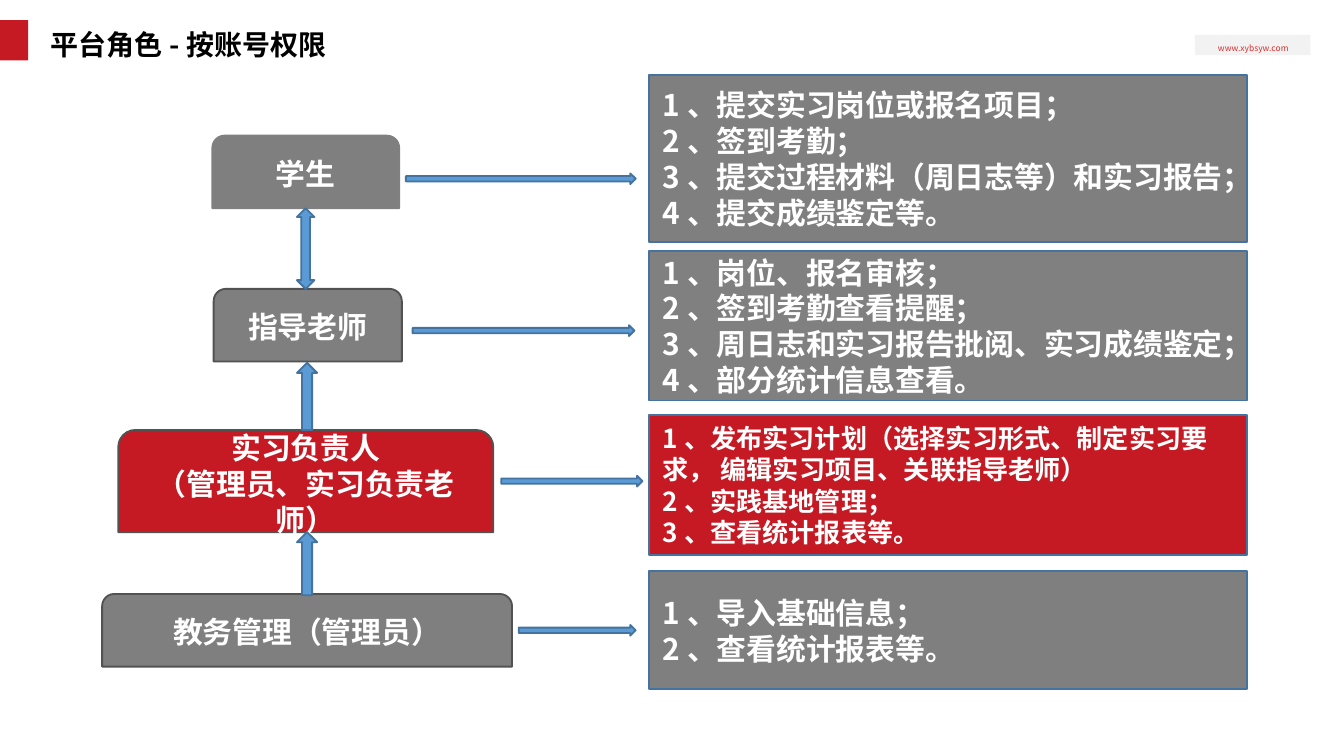
from lxml.etree import SubElement
from pptx import Presentation
from pptx.dml.color import RGBColor
from pptx.enum.shapes import MSO_SHAPE
from pptx.enum.text import MSO_ANCHOR, PP_ALIGN
from pptx.oxml.ns import qn
from pptx.util import Inches, Pt

FONT = "Noto Sans CJK SC"
RED = RGBColor(0xC5, 0x1A, 0x24)
URL_RED = RGBColor(0xD6, 0x2F, 0x2F)
GRAY = RGBColor(0x7F, 0x7F, 0x7F)
MID_GRAY = RGBColor(0x80, 0x80, 0x80)
DARK_GRAY = RGBColor(0x52, 0x52, 0x52)
PALE_GRAY = RGBColor(0xF2, 0xF2, 0xF2)
BLUE = RGBColor(0x5B, 0x9B, 0xD5)
DARK_BLUE = RGBColor(0x43, 0x73, 0x9E)
WHITE = RGBColor(0xFF, 0xFF, 0xFF)
BLACK = RGBColor(0x00, 0x00, 0x00)

# Widescreen slide, 16:9
prs = Presentation()
prs.slide_width = Inches(10)
prs.slide_height = Inches(10 * 9 / 16)
slide = prs.slides.add_slide(prs.slide_layouts[6])


def add_block(kind, box, fill, line=None):
    block = slide.shapes.add_shape(kind, *[Inches(v) for v in box])
    block.shadow.inherit = False
    block.fill.solid()
    block.fill.fore_color.rgb = fill
    if line is None:
        block.line.fill.background()
    else:
        block.line.color.rgb = line
        block.line.width = Pt(1)
    return block


def write_text(shape, text, size=16, color=WHITE, bold=True, align=PP_ALIGN.LEFT,
               anchor=MSO_ANCHOR.MIDDLE, spacing=None, inset=0.1):
    frame = shape.text_frame
    frame.word_wrap = True
    frame.vertical_anchor = anchor
    frame.margin_left = frame.margin_right = Inches(inset)
    frame.text = text
    for paragraph in frame.paragraphs:
        paragraph.alignment = align
        paragraph.line_spacing = spacing
        for run in paragraph.runs:
            run.font.size = Pt(size)
            run.font.bold = bold
            run.font.color.rgb = color
            run.font.name = FONT
            SubElement(run.font._element, qn("a:ea"), typeface=FONT)


# Header: red marker, web address, title
add_block(MSO_SHAPE.RECTANGLE, (0, 0.15, 0.21, 0.3), RED)
add_block(MSO_SHAPE.RECTANGLE, (8.89, 0.26, 0.86, 0.15), PALE_GRAY)
address = slide.shapes.add_textbox(Inches(9), Inches(0.27), Inches(0.65), Inches(0.18))
write_text(address, "www.xybsyw.com", size=4.5, color=URL_RED, bold=False,
           align=PP_ALIGN.CENTER, anchor=MSO_ANCHOR.TOP, inset=0.05)
title = slide.shapes.add_textbox(Inches(0.28), Inches(0.08), Inches(5.97), Inches(0.43))
write_text(title, "平台角色-按账号权限", size=15, color=BLACK,
           anchor=MSO_ANCHOR.BOTTOM, spacing=0.9)

# Roles: name, box, fill, outline
roles = [
    ("学生", (1.58, 1.01, 1.39, 0.54), GRAY, MID_GRAY),
    ("指导老师", (1.59, 2.15, 1.4, 0.54), GRAY, DARK_GRAY),
    ("实习负责人\n（管理员、实习负责老师）", (0.88, 3.2, 2.79, 0.76), RED, DARK_GRAY),
    ("教务管理（管理员）", (0.76, 4.42, 3.05, 0.54), GRAY, DARK_GRAY),
]
for name, box, fill, outline in roles:
    role = add_block(MSO_SHAPE.ROUND_2_SAME_RECTANGLE, box, fill, outline)
    write_text(role, name, align=PP_ALIGN.CENTER)

# Permissions of each role: top, height, fill, text size, lines
permissions = [
    (0.56, 1.24, GRAY, 16, ["1、提交实习岗位或报名项目；", "2、签到考勤；",
                            "3、提交过程材料（周日志等）和实习报告；", "4、提交成绩鉴定等。"]),
    (1.87, 1.11, MID_GRAY, 16, ["1、岗位、报名审核；", "2、签到考勤查看提醒；",
                                "3、周日志和实习报告批阅、实习成绩鉴定；",
                                "4、部分统计信息查看。"]),
    (3.09, 1.04, RED, 14, ["1、发布实习计划（选择实习形式、制定实习要求， 编辑实习项目、关联指导老师）",
                           "2、实践基地管理；", "3、查看统计报表等。"]),
    (4.25, 0.88, GRAY, 16, ["1、导入基础信息；", "2、查看统计报表等。"]),
]
for top, height, fill, size, lines in permissions:
    panel = add_block(MSO_SHAPE.RECTANGLE, (4.83, top, 4.45, height), fill, DARK_BLUE)
    write_text(panel, "\n".join(lines), size=size)

# Arrows from each role to its permissions
for left, top, width in [(3.02, 1.29, 1.71), (3.07, 2.42, 1.65),
                         (3.73, 3.54, 1.05), (3.86, 4.65, 0.87)]:
    add_block(MSO_SHAPE.RIGHT_ARROW, (left, top, width, 0.08), BLUE, DARK_BLUE)

# Arrows between roles
for kind, top, width, height in [(MSO_SHAPE.UP_DOWN_ARROW, 1.55, 0.13, 0.6),
                                 (MSO_SHAPE.UP_ARROW, 2.7, 0.15, 0.5),
                                 (MSO_SHAPE.UP_ARROW, 3.96, 0.15, 0.47)]:
    add_block(kind, (2.21, top, width, height), BLUE, DARK_BLUE)

prs.save("out.pptx")
